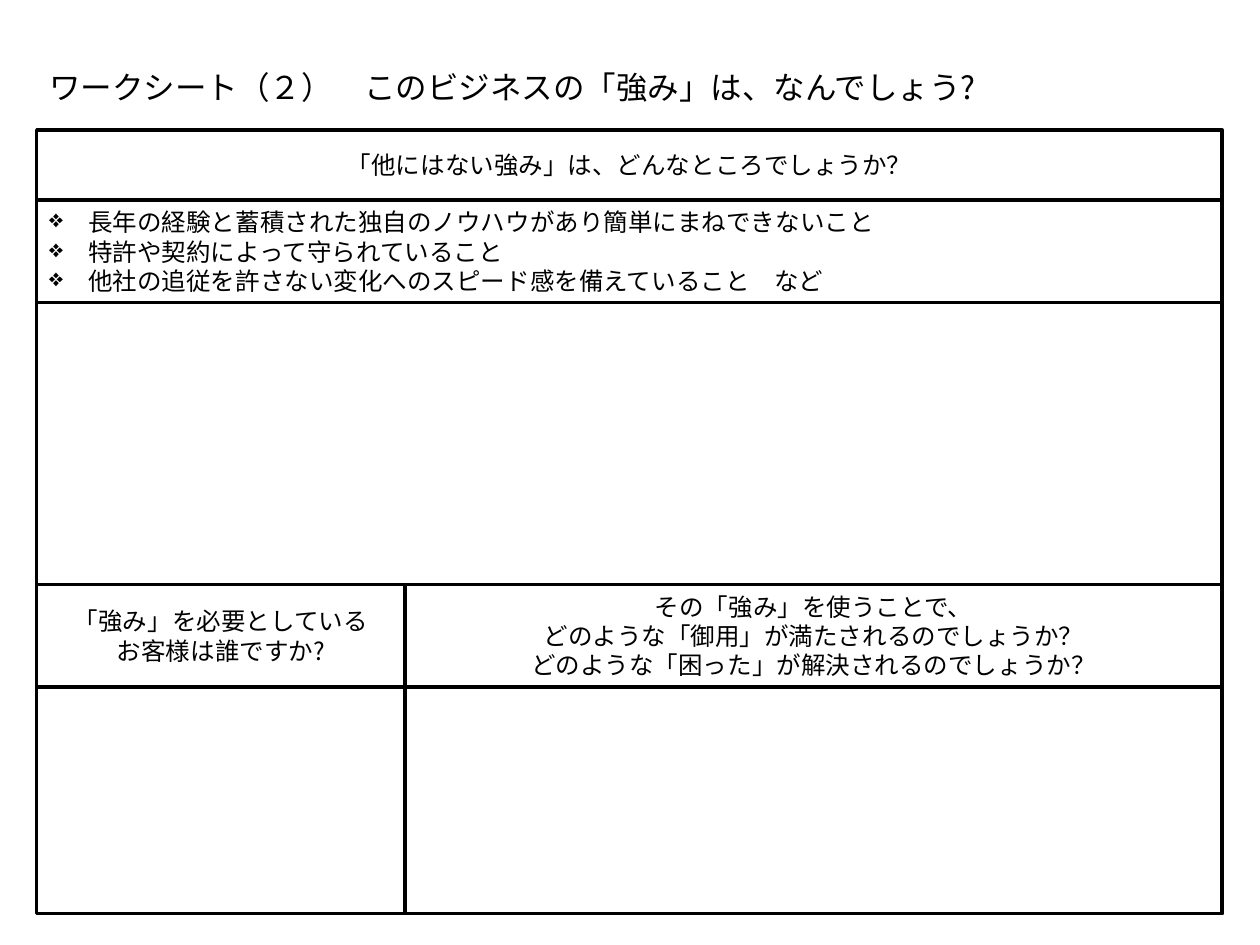
from lxml.etree import SubElement
from pptx import Presentation
from pptx.dml.color import RGBColor
from pptx.enum.shapes import MSO_SHAPE as Preset
from pptx.enum.text import MSO_ANCHOR as Anchor, MSO_AUTO_SIZE as AutoSize, PP_ALIGN as Align
from pptx.oxml.ns import qn
from pptx.util import Cm, Pt

# Content
TITLE = "ワークシート（２）　このビジネスの「強み」は、なんでしょう?"
STRENGTH_QUESTION = ["「他にはない強み」は、どんなところでしょうか？"]
STRENGTH_HINTS = [
    "長年の経験と蓄積された独自のノウハウがあり簡単にまねできないこと",
    "特許や契約によって守られていること",
    "他社の追従を許さない変化へのスピード感を備えていること　など",
]
CUSTOMER_QUESTION = ["「強み」を必要としている", "お客様は誰ですか?"]
NEEDS_QUESTION = [
    "その「強み」を使うことで、",
    "どのような「御用」が満たされるのでしょうか？",
    "どのような「困った」が解決されるのでしょうか？",
]

# Worksheet rows: height in cm, then the lines of each box
ROWS = [
    (1.41, [STRENGTH_QUESTION]),
    (2.07, [STRENGTH_HINTS]),
    (5.68, [[]]),
    (2.07, [CUSTOMER_QUESTION, NEEDS_QUESTION]),
    (4.57, [[], []]),
]
LEFT, TOP, WIDTH = 0.74, 2.62, 23.9
SPLIT_WIDTHS = [7.43, WIDTH - 7.43]
FONT = "Noto Sans CJK JP"
COLORS = {"ink": "000000", "paper": "FFFFFF"}
INDENT = Cm(0.79)


def color(name):
    return RGBColor.from_string(COLORS[name])


def write(text_frame, lines, size, align=Align.LEFT):
    text_frame.text = "\n".join(lines)
    for paragraph in text_frame.paragraphs:
        paragraph.alignment = align
        for run in paragraph.runs:
            run.font.size = Pt(size)
            run.font.name = FONT
            run.font.color.rgb = color("ink")
            SubElement(run.font._element, qn("a:ea"), typeface=FONT)


def add_bullets(text_frame):
    for paragraph in text_frame.paragraphs:
        properties = paragraph._p.get_or_add_pPr()
        properties.set("marL", str(INDENT))
        properties.set("indent", str(-INDENT))
        SubElement(properties, qn("a:buChar"), char="❖")


def add_box(slide, left, top, width, height, lines):
    box = slide.shapes.add_shape(Preset.RECTANGLE, Cm(left), Cm(top), Cm(width), Cm(height))
    box.shadow.inherit = False
    box.fill.solid()
    box.fill.fore_color.rgb = color("paper")
    box.line.color.rgb = color("ink")
    box.line.width = Pt(2)
    box.text_frame.vertical_anchor = Anchor.MIDDLE
    if lines is STRENGTH_HINTS:
        write(box.text_frame, lines, 14)
        add_bullets(box.text_frame)
    elif lines:
        write(box.text_frame, lines, 14, Align.CENTER)


def main():
    presentation = Presentation()
    presentation.slide_width, presentation.slide_height = Cm(25.4), Cm(19.05)
    slide = presentation.slides.add_slide(presentation.slide_layouts[6])

    # Title
    title = slide.shapes.add_textbox(Cm(LEFT), Cm(1.24), Cm(19.46), Cm(1.02))
    title.text_frame.word_wrap = False
    title.text_frame.auto_size = AutoSize.SHAPE_TO_FIT_TEXT
    write(title.text_frame, [TITLE], 18)

    # Boxes, stacked row by row
    top = TOP
    for height, boxes in ROWS:
        left = LEFT
        widths = [WIDTH] if len(boxes) == 1 else SPLIT_WIDTHS
        for width, lines in zip(widths, boxes):
            add_box(slide, left, top, width, height, lines)
            left += width
        top += height

    presentation.save("out.pptx")


if __name__ == "__main__":
    main()
